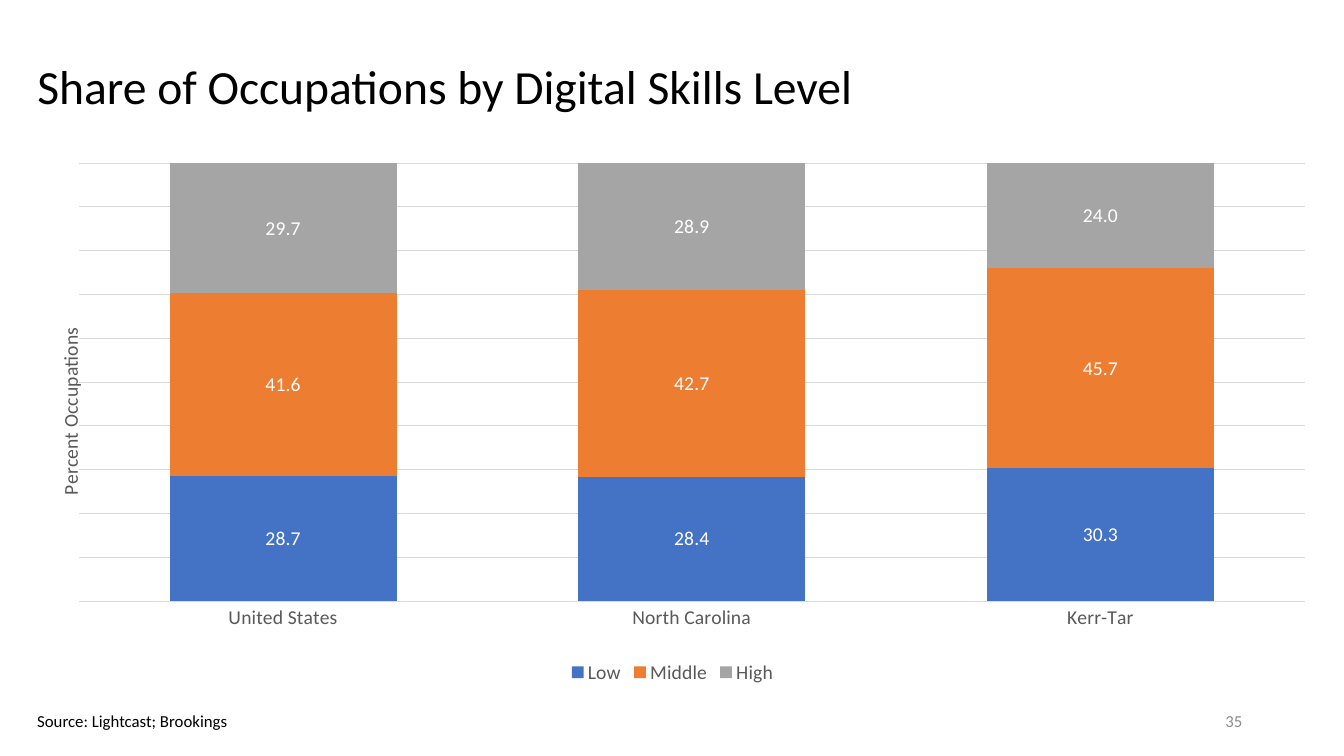
from lxml import etree
from pptx import Presentation
from pptx.chart.data import CategoryChartData
from pptx.dml.color import RGBColor
from pptx.enum.chart import XL_CHART_TYPE, XL_LABEL_POSITION, XL_LEGEND_POSITION, XL_TICK_MARK
from pptx.enum.text import MSO_ANCHOR, MSO_AUTO_SIZE, PP_ALIGN
from pptx.oxml.ns import qn
from pptx.util import Inches, Pt

STACKED_100 = XL_CHART_TYPE.COLUMN_STACKED_100
LABEL_CENTER = XL_LABEL_POSITION.CENTER
LEGEND_BOTTOM = XL_LEGEND_POSITION.BOTTOM
NO_TICKS = XL_TICK_MARK.NONE
MIDDLE, TOP = MSO_ANCHOR.MIDDLE, MSO_ANCHOR.TOP
LEFT, RIGHT = PP_ALIGN.LEFT, PP_ALIGN.RIGHT

FONT = "Calibri"
COLORS = {
    "text": "000000", "number": "8C8C8C", "axis": "595959", "grid": "D9D9D9",
    "label": "FFFFFF", "Low": "4472C4", "Middle": "ED7D31", "High": "A5A5A5",
}
SHARES = {
    "Low": (28.7, 28.4, 30.3),
    "Middle": (41.6, 42.7, 45.7),
    "High": (29.7, 28.9, 24.0),
}


def style_font(font, size, color):
    font.name = FONT
    font.size = Pt(size)
    font.bold = False
    font.color.rgb = RGBColor.from_string(COLORS[color])


def set_layout(parent, index, **settings):
    """Give a chart part a manual layout, as fractions of the chart."""
    for old_layout in parent.findall(qn("c:layout")):
        parent.remove(old_layout)
    layout = etree.Element(qn("c:layout"))
    manual = etree.SubElement(layout, qn("c:manualLayout"))
    for tag, value in settings.items():
        etree.SubElement(manual, qn(f"c:{tag}")).set("val", str(value))
    parent.insert(index, layout)


presentation = Presentation()
presentation.slide_width = Inches(13.33)
presentation.slide_height = Inches(7.5)
slide = presentation.slides.add_slide(presentation.slide_layouts[5])

# Title, slide number and source line
title = slide.shapes.title
title.left, title.top = Inches(0.27), Inches(0.34)
title.width, title.height = Inches(12.76), Inches(1.09)
number_box = slide.shapes.add_textbox(Inches(9.42), Inches(6.95), Inches(3), Inches(0.4))
source_box = slide.shapes.add_textbox(Inches(0.27), Inches(7), Inches(2.11), Inches(0.3))

for shape, text, size, color, anchor, alignment, wrap in (
    (title, "Share of Occupations by Digital Skills Level", 34, "text", MIDDLE, LEFT, True),
    (number_box, "35", 12, "number", MIDDLE, RIGHT, True),
    (source_box, "Source: Lightcast; Brookings", 12, "text", TOP, LEFT, False),
):
    frame = shape.text_frame
    frame.word_wrap = wrap
    frame.auto_size = MSO_AUTO_SIZE.NONE
    frame.vertical_anchor = anchor
    paragraph = frame.paragraphs[0]
    paragraph.alignment = alignment
    run = paragraph.add_run()
    run.text = text
    style_font(run.font, size, color)
title.text_frame.paragraphs[0].line_spacing = 0.9
source_box.text_frame.auto_size = MSO_AUTO_SIZE.SHAPE_TO_FIT_TEXT

# Stacked chart
chart_data = CategoryChartData(number_format="0.0")
chart_data.categories = ["United States", "North Carolina", "Kerr-Tar"]
for level, values in SHARES.items():
    chart_data.add_series(level, values)
chart = slide.shapes.add_chart(
    STACKED_100, Inches(0.27), Inches(1.43), Inches(12.8), Inches(5.4), chart_data
).chart
chart.has_title = False
style_font(chart.font, 14, "text")
plot = chart.plots[0]
plot.gap_width = 80
plot.overlap = 100
plot.vary_by_categories = False
set_layout(
    chart._chartSpace.chart.plotArea, 0, layoutTarget="inner", xMode="edge",
    yMode="edge", x=0.04, y=0.035, w=0.95, h=0.805,
)

# Columns and their labels
for series in plot.series:
    series.format.fill.solid()
    series.format.fill.fore_color.rgb = RGBColor.from_string(COLORS[series.name])
    labels = series.data_labels
    labels.show_value = True
    labels.number_format = "0.0"
    labels.number_format_is_linked = False
    labels.position = LABEL_CENTER
    style_font(labels.font, 14, "label")

# Axes
category_axis = chart.category_axis
category_axis.major_tick_mark = NO_TICKS
category_axis.minor_tick_mark = NO_TICKS
style_font(category_axis.tick_labels.font, 14, "axis")
value_axis = chart.value_axis
value_axis.visible = False
value_axis.major_unit = 0.1
value_axis.has_major_gridlines = True
for line in (category_axis.format.line, value_axis.major_gridlines.format.line):
    line.color.rgb = RGBColor.from_string(COLORS["grid"])
    line.width = Pt(0.75)

axis_title = value_axis.axis_title
run = axis_title.text_frame.paragraphs[0].add_run()
run.text = "Percent Occupations"
style_font(run.font, 14, "axis")
body = axis_title.text_frame._txBody.find(qn("a:bodyPr"))
body.set("rot", "-5400000")
body.set("vert", "horz")
set_layout(axis_title._element, 1, xMode="edge", yMode="edge", x=0.02, y=0.33)

# Legend
chart.has_legend = True
chart.legend.position = LEGEND_BOTTOM
chart.legend.include_in_layout = False
style_font(chart.legend.font, 14, "axis")

presentation.save("out.pptx")
